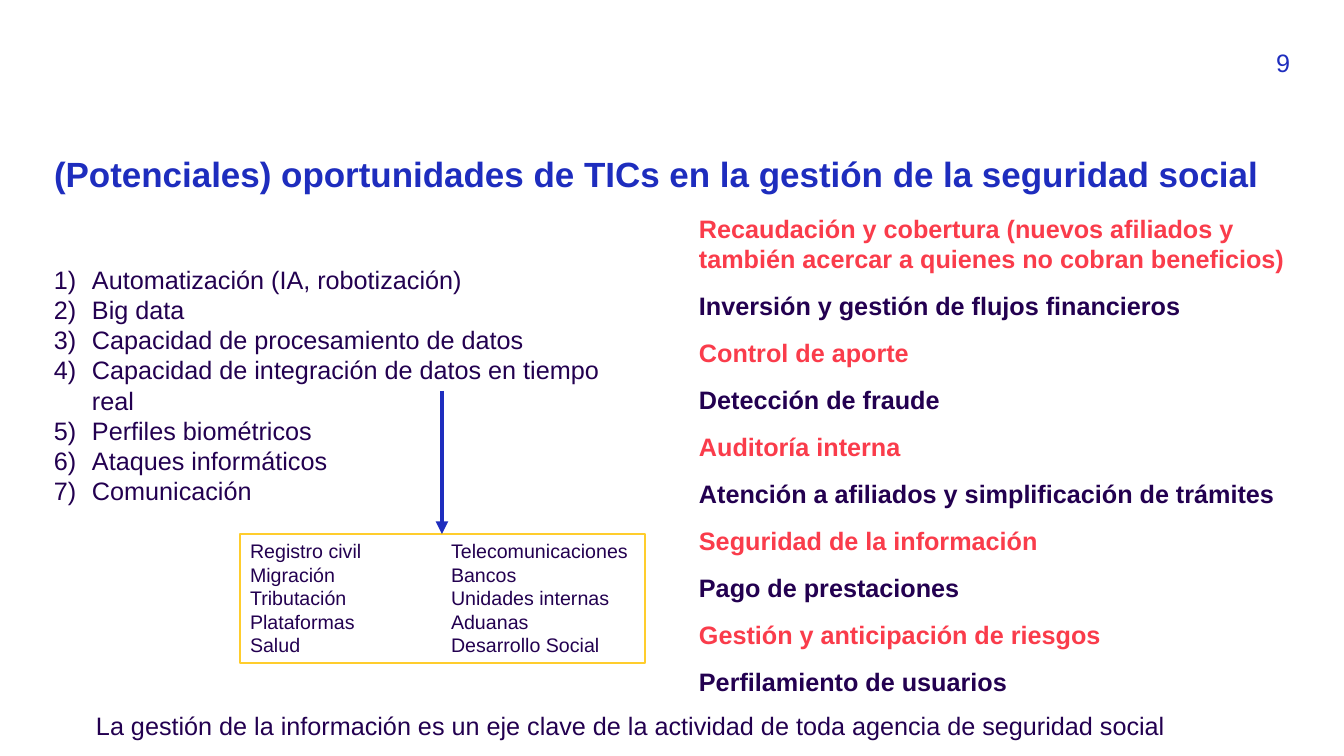
from lxml import etree
from pptx import Presentation
from pptx.dml.color import RGBColor
from pptx.enum.shapes import MSO_CONNECTOR, MSO_SHAPE
from pptx.enum.text import MSO_ANCHOR, PP_ALIGN
from pptx.oxml.ns import qn
from pptx.util import Emu, Pt

STRAIGHT = MSO_CONNECTOR.STRAIGHT
RECTANGLE = MSO_SHAPE.RECTANGLE
TOP = MSO_ANCHOR.TOP
LEFT, RIGHT = PP_ALIGN.LEFT, PP_ALIGN.RIGHT

SCALE = 914400 / 100.8
COLORS = {
    "blue": "1E2DBE",
    "purple": "230050",
    "red": "FA3C4B",
    "yellow": "FFCD2D",
    "white": "FFFFFF",
}
TECHNOLOGIES = [
    "Automatización (IA, robotización)",
    "Big data",
    "Capacidad de procesamiento de datos",
    "Capacidad de integración de datos en tiempo real",
    "Perfiles biométricos",
    "Ataques informáticos",
    "Comunicación",
]
OPPORTUNITIES = [
    "Recaudación y cobertura (nuevos afiliados y también acercar a quienes no cobran beneficios)",
    "Inversión y gestión de flujos financieros",
    "Control de aporte",
    "Detección de fraude",
    "Auditoría interna",
    "Atención a afiliados y simplificación de trámites",
    "Seguridad de la información",
    "Pago de prestaciones",
    "Gestión y anticipación de riesgos",
    "Perfilamiento de usuarios",
]
DATA_SOURCES = [
    ("Registro civil", "Telecomunicaciones"),
    ("Migración", "Bancos"),
    ("Tributación", "Unidades internas"),
    ("Plataformas", "Aduanas"),
    ("Salud", "Desarrollo Social"),
]


def px(length):
    return Emu(round(length * SCALE))


def rgb(name):
    return RGBColor.from_string(COLORS[name])


def write(frame, lines, size=18, colors=("purple",), bold=False, align=LEFT,
          gap=0, spacing=1.0, number_indent=0, tab=0, font="Arial"):
    for index, line in enumerate(lines):
        para = frame.add_paragraph() if index else frame.paragraphs[0]
        properties = para._p.get_or_add_pPr()
        if number_indent:
            indent = px(number_indent)
            properties.set("marL", str(indent))
            properties.set("indent", str(-indent))
            etree.SubElement(properties, qn("a:buFont"), typeface="+mj-lt")
            etree.SubElement(properties, qn("a:buAutoNum"), type="arabicParenR")
        if tab:
            stops = etree.SubElement(properties, qn("a:tabLst"))
            etree.SubElement(stops, qn("a:tab"), pos=str(px(tab)), algn="l")
        para.alignment = align
        para.line_spacing = spacing
        para.space_before = Pt(gap if index else 0)
        para.space_after = Pt(gap)
        span = para.add_run()
        span.text = line
        span.font.name = font
        span.font.size = Pt(size)
        span.font.bold = bold
        span.font.color.rgb = rgb(colors[index % len(colors)])


class Page:
    def __init__(self, deck, font="Arial"):
        self.shapes = deck.slides.add_slide(deck.slide_layouts[6]).shapes
        self.font = font

    def text(self, x, y, width, height, lines, inset_x=0, inset_y=0, **style):
        box = self.shapes.add_textbox(px(x), px(y), px(width), px(height))
        self.fill_frame(box.text_frame, lines, inset_x, inset_y, **style)

    def panel(self, x, y, width, height, lines, fill, line, **style):
        box = self.shapes.add_shape(RECTANGLE, px(x), px(y), px(width), px(height))
        box.shadow.inherit = False
        box.fill.solid()
        box.fill.fore_color.rgb = rgb(fill)
        box.line.color.rgb = rgb(line)
        box.line.width = Pt(1)
        self.fill_frame(box.text_frame, lines, 10, 5, **style)

    def fill_frame(self, frame, lines, inset_x, inset_y, **style):
        frame.word_wrap = True
        frame.vertical_anchor = TOP
        frame.margin_left = frame.margin_right = px(inset_x)
        frame.margin_top = frame.margin_bottom = px(inset_y)
        write(frame, lines, font=self.font, **style)

    def arrow(self, x1, y1, x2, y2, color, width):
        connector = self.shapes.add_connector(STRAIGHT, px(x1), px(y1), px(x2), px(y2))
        connector.line.color.rgb = rgb(color)
        connector.line.width = Pt(width)
        outline = connector.line._get_or_add_ln()
        etree.SubElement(outline, qn("a:tailEnd"), type="triangle")
        etree.SubElement(connector._element.spPr, qn("a:effectLst"))


def main():
    deck = Presentation()
    deck.slide_width, deck.slide_height = px(1344), px(756)
    page = Page(deck)
    page.text(54, 157, 1236, 80,
              ["(Potenciales) oportunidades de TICs en la gestión de la seguridad social"],
              size=25, colors=("blue",), bold=True, spacing=0.9)
    page.text(54, 264, 591, 384, TECHNOLOGIES, number_indent=38)
    page.text(699, 213, 591, 384, OPPORTUNITIES,
              colors=("red", "purple"), bold=True, gap=6)
    page.text(1231, 47, 59, 31, ["9"], colors=("blue",), align=RIGHT)
    page.text(86, 705, 1099, 40,
              ["La gestión de la información es un eje clave de la actividad de toda agencia de seguridad social"],
              inset_x=10, inset_y=5)
    page.panel(240, 534, 405, 129, ["\t".join(row) for row in DATA_SOURCES],
               fill="white", line="yellow", size=14, tab=201)
    page.arrow(442, 391, 442, 534, "blue", 3)
    deck.save("out.pptx")


if __name__ == "__main__":
    main()
